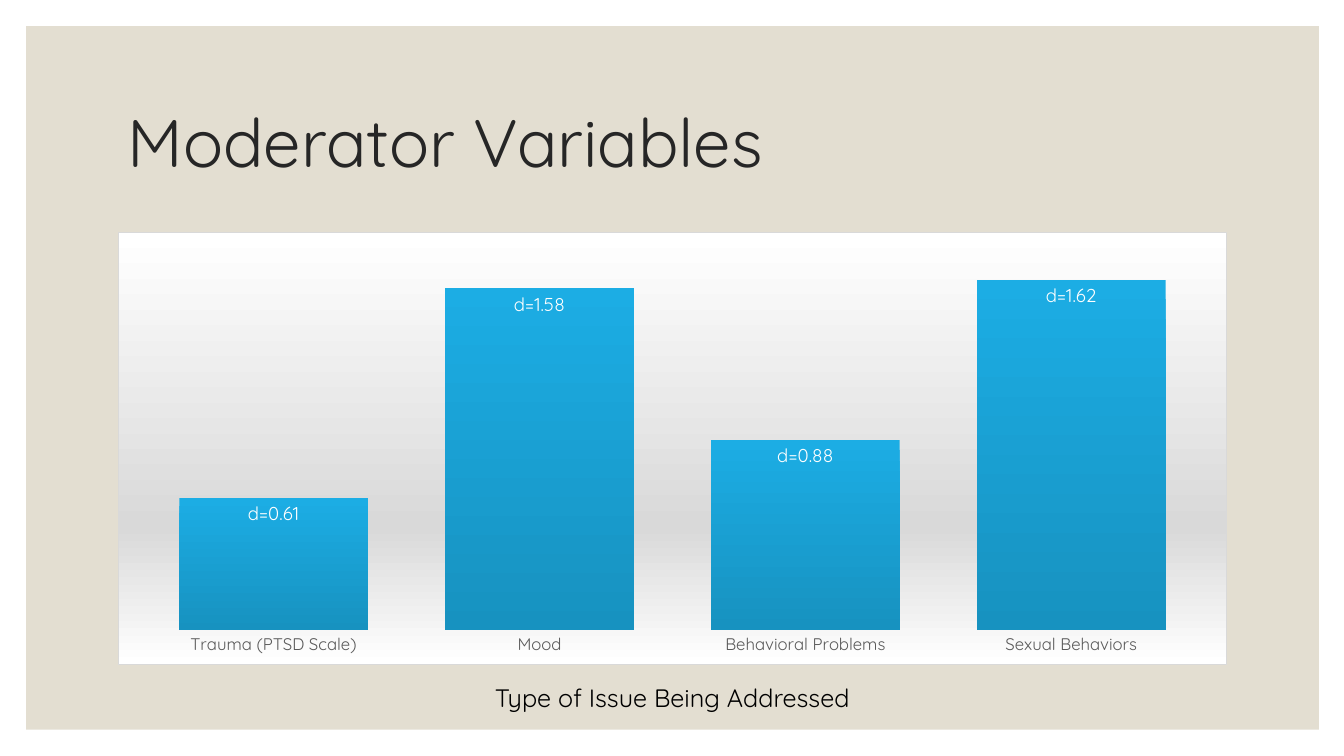
from dataclasses import dataclass

from pptx import Presentation
from pptx.chart.chart import Chart
from pptx.chart.data import CategoryChartData
from pptx.dml.color import RGBColor
from pptx.enum.chart import XL_CHART_TYPE, XL_LABEL_POSITION, XL_TICK_LABEL_POSITION, XL_TICK_MARK
from pptx.enum.shapes import MSO_SHAPE
from pptx.enum.text import MSO_ANCHOR
from pptx.oxml import parse_xml
from pptx.oxml.ns import nsdecls, qn
from pptx.slide import Slide
from pptx.util import Inches, Pt

FONT = "Quicksand"
PANEL_COLOR = "E3DED1"
BORDER_COLOR = "D9D9D9"


@dataclass
class TextBlock:
    text: str
    box: tuple[float, float, float, float]
    size: float
    color: str
    text_format: dict
    line_spacing: float = 1.0


@dataclass
class GradientStop:
    percent: int
    color: str


TEXT_BLOCKS = [
    TextBlock("Moderator Variables", (1.17, 0.7, 11, 1.5), 48, "262626",
              {"word_wrap": True, "vertical_anchor": MSO_ANCHOR.MIDDLE}, 0.9),
    TextBlock("Type of Issue Being Addressed", (4.81, 6.72, 5.42, 0.4), 18, "000000",
              {"word_wrap": True}),
]
EFFECT_SIZES = {
    "Trauma (PTSD Scale)": 0.61,
    "Mood": 1.58,
    "Behavioral Problems": 0.88,
    "Sexual Behaviors": 1.62,
}
CHART_GRADIENT = [GradientStop(0, "FFFFFF"), GradientStop(68, "D9D9D9"), GradientStop(100, "FFFFFF")]
BAR_GRADIENT = [GradientStop(0, "1CADE4"), GradientStop(100, "1792C0")]
PLOT_LAYOUT = {"x": 0.02, "y": 0.02, "w": 0.96, "h": 0.9}


def rgb(color: str) -> RGBColor:
    return RGBColor.from_string(color)


def apply_format(target: object, values: dict) -> None:
    for name, value in values.items():
        setattr(target, name, value)


def format_font(font: object, size: float, color: str) -> None:
    apply_format(font, {"name": FONT, "size": Pt(size), "bold": False})
    font.color.rgb = rgb(color)


def add_panel(slide: Slide) -> None:
    panel = slide.shapes.add_shape(
        MSO_SHAPE.RECTANGLE, *map(Inches, (0.26, 0.26, 12.82, 6.98)))
    panel.shadow.inherit = False
    panel.fill.solid()
    panel.fill.fore_color.rgb = rgb(PANEL_COLOR)
    panel.line.fill.background()


def add_text(slide: Slide, block: TextBlock) -> None:
    frame = slide.shapes.add_textbox(*map(Inches, block.box)).text_frame
    apply_format(frame, block.text_format)
    paragraph = frame.paragraphs[0]
    apply_format(paragraph, {"text": block.text, "line_spacing": block.line_spacing})
    format_font(paragraph.runs[0].font, block.size, block.color)


def format_chart_area(chart: Chart) -> None:
    # Gradient background and thin border
    stops = "".join(
        f'<a:gs pos="{stop.percent * 1000}"><a:srgbClr val="{stop.color}"/></a:gs>'
        for stop in CHART_GRADIENT)
    chart_element = chart.element.find(qn("c:chart"))
    chart_element.addnext(parse_xml(
        f'<c:spPr {nsdecls("c", "a")}><a:gradFill rotWithShape="1"><a:gsLst>{stops}</a:gsLst>'
        f'<a:lin ang="5400000" scaled="0"/></a:gradFill><a:ln w="{Pt(0.75)}"><a:solidFill>'
        f'<a:srgbClr val="{BORDER_COLOR}"/></a:solidFill></a:ln></c:spPr>'))

    # Fixed plot position
    plot_area = chart_element.find(qn("c:plotArea"))
    for layout in plot_area.findall(qn("c:layout")):
        plot_area.remove(layout)
    modes = "".join(f'<c:{key}Mode val="edge"/>' for key in "xy")
    sizes = "".join(f'<c:{key} val="{value}"/>' for key, value in PLOT_LAYOUT.items())
    plot_area.insert(0, parse_xml(
        f'<c:layout {nsdecls("c")}><c:manualLayout><c:layoutTarget val="inner"/>'
        f'{modes}{sizes}</c:manualLayout></c:layout>'))


def add_effect_chart(slide: Slide) -> None:
    data = CategoryChartData()
    data.categories = list(EFFECT_SIZES)
    data.add_series("Series 1", list(EFFECT_SIZES.values()))
    chart = slide.shapes.add_chart(
        XL_CHART_TYPE.COLUMN_CLUSTERED, *map(Inches, (1.17, 2.3, 11, 4.3)), data).chart
    apply_format(chart, {"has_legend": False, "has_title": False})
    format_font(chart.font, 10, "000000")
    format_chart_area(chart)

    # Axes
    apply_format(chart.value_axis, {
        "minimum_scale": 0, "maximum_scale": 1.8, "visible": False,
        "has_major_gridlines": False,
        "tick_label_position": XL_TICK_LABEL_POSITION.NONE})
    category_axis = chart.category_axis
    apply_format(category_axis, {
        "major_tick_mark": XL_TICK_MARK.NONE, "minor_tick_mark": XL_TICK_MARK.NONE})
    category_axis.format.line.fill.background()
    format_font(category_axis.tick_labels.font, 12, "595959")

    # Bars and their labels
    plot = chart.plots[0]
    apply_format(plot, {"gap_width": 41, "vary_by_categories": False})
    series = plot.series[0]
    series.format.line.fill.background()
    fill = series.format.fill
    fill.gradient()
    fill.gradient_angle = 270
    for fill_stop, stop in zip(fill.gradient_stops, BAR_GRADIENT):
        fill_stop.position = stop.percent / 100
        fill_stop.color.rgb = rgb(stop.color)
    labels = series.data_labels
    apply_format(labels, {
        "show_value": True, "position": XL_LABEL_POSITION.INSIDE_END,
        "number_format": '"d="0.00', "number_format_is_linked": False})
    format_font(labels.font, 13.3, "FFFFFF")


def main() -> None:
    presentation = Presentation()
    apply_format(presentation, {"slide_width": Inches(13.33), "slide_height": Inches(7.5)})
    slide = presentation.slides.add_slide(presentation.slide_layouts[6])
    add_panel(slide)
    add_effect_chart(slide)
    for block in TEXT_BLOCKS:
        add_text(slide, block)
    presentation.save("out.pptx")


if __name__ == "__main__":
    main()
